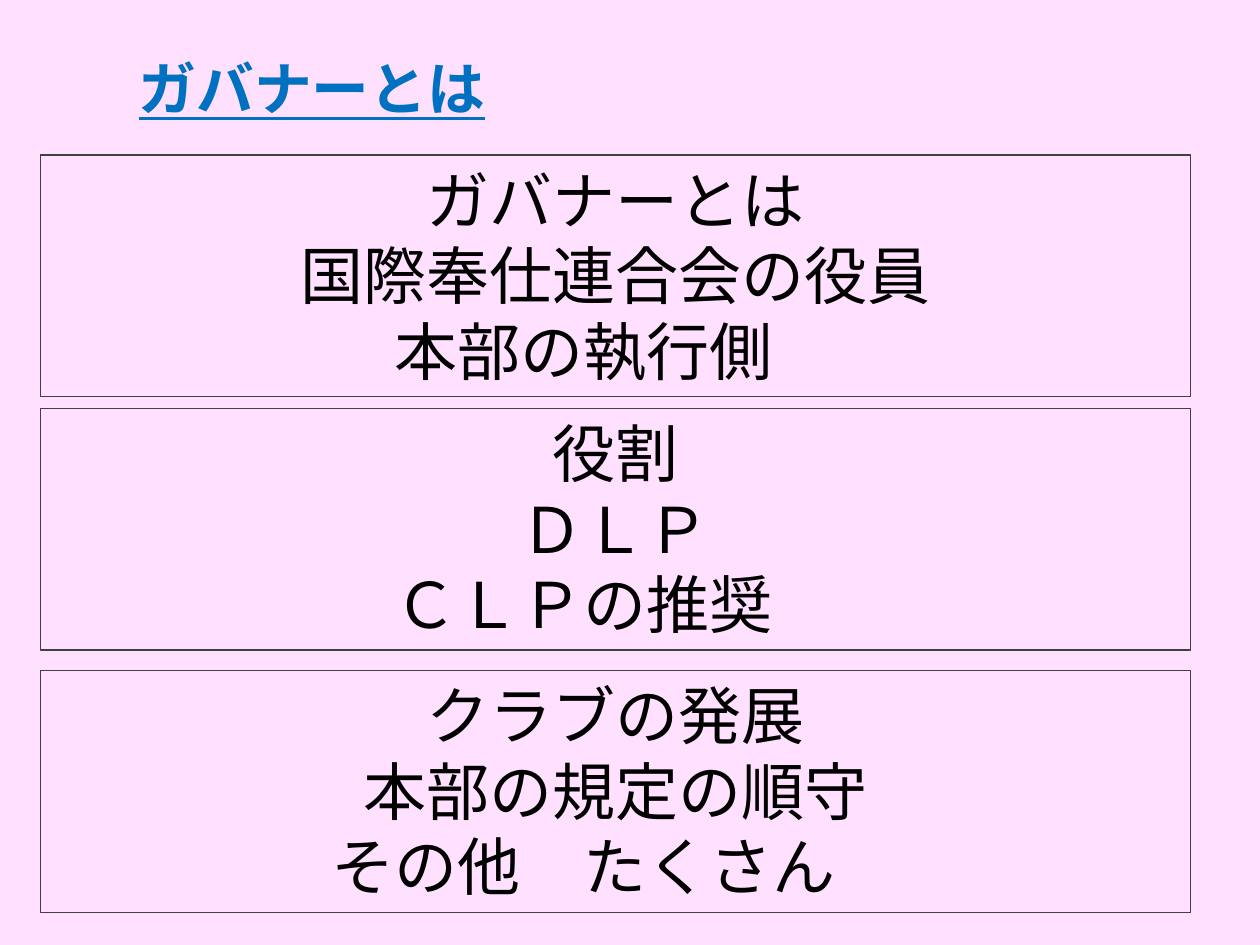
from dataclasses import dataclass

from pptx import Presentation
from pptx.dml.color import RGBColor
from pptx.enum.lang import MSO_LANGUAGE_ID
from pptx.enum.shapes import MSO_SHAPE
from pptx.enum.text import MSO_ANCHOR, MSO_AUTO_SIZE, PP_ALIGN
from pptx.util import Inches, Pt

RECTANGLE = MSO_SHAPE.RECTANGLE
TOP, MIDDLE = MSO_ANCHOR.TOP, MSO_ANCHOR.MIDDLE
LEFT, CENTER = PP_ALIGN.LEFT, PP_ALIGN.CENTER
GROW, FIXED = MSO_AUTO_SIZE.SHAPE_TO_FIT_TEXT, MSO_AUTO_SIZE.NONE
JAPANESE = MSO_LANGUAGE_ID.JAPANESE


@dataclass(frozen=True)
class Theme:
    font: str = "Calibri"
    background: RGBColor = RGBColor(0xFF, 0xE1, 0xFF)
    heading: RGBColor = RGBColor(0x00, 0x70, 0xC0)
    body: RGBColor = RGBColor(0x00, 0x00, 0x00)
    border: RGBColor = RGBColor(0x40, 0x40, 0x40)
    heading_size: Pt = Pt(33)
    body_size: Pt = Pt(36)
    border_width: Pt = Pt(0.75)


THEME = Theme()
HEADING = "ガバナーとは"
PANELS = [
    (1.23, ["ガバナーとは", "国際奉仕連合会の役員", "本部の執行側\u3000"]),
    (3.24, ["役割", "ＤＬＰ", "ＣＬＰの推奨\u3000"]),
    (5.32, ["クラブの発展", "本部の規定の順守", "その他\u3000たくさん\u3000"]),
]


def apply(target, values):
    for name, value in values.items():
        setattr(target, name, value)


def write_lines(frame, lines, color, frame_format, paragraph_format, font_format):
    apply(frame, {"word_wrap": True, **frame_format})
    for index, line in enumerate(lines):
        paragraph = frame.paragraphs[0] if index == 0 else frame.add_paragraph()
        apply(paragraph, paragraph_format)
        run = paragraph.add_run()
        run.text = line
        apply(run.font, {"name": THEME.font, "language_id": JAPANESE, **font_format})
        run.font.color.rgb = color


def add_heading(slide):
    heading = slide.shapes.title
    apply(heading, {"left": Inches(1), "top": Inches(0.3),
                    "width": Inches(8.5), "height": Inches(0.85)})
    write_lines(heading.text_frame, [HEADING], THEME.heading,
                {"vertical_anchor": MIDDLE, "auto_size": FIXED},
                {"alignment": LEFT, "line_spacing": 0.9},
                {"size": THEME.heading_size, "bold": True, "underline": True})


def add_panel(slide, top, lines):
    panel = slide.shapes.add_shape(
        RECTANGLE, Inches(0.32), Inches(top), Inches(9.13), Inches(1.92))
    panel.shadow.inherit = False
    panel.fill.background()
    panel.line.color.rgb = THEME.border
    panel.line.width = THEME.border_width
    write_lines(panel.text_frame, lines, THEME.body,
                {"vertical_anchor": TOP, "auto_size": GROW},
                {"alignment": CENTER}, {"size": THEME.body_size})


def main():
    deck = Presentation()
    apply(deck, {"slide_width": Inches(10), "slide_height": Inches(7.5)})
    slide = deck.slides.add_slide(deck.slide_layouts[5])
    slide.background.fill.solid()
    slide.background.fill.fore_color.rgb = THEME.background
    add_heading(slide)
    for top, lines in PANELS:
        add_panel(slide, top, lines)
    deck.save("out.pptx")


if __name__ == "__main__":
    main()
